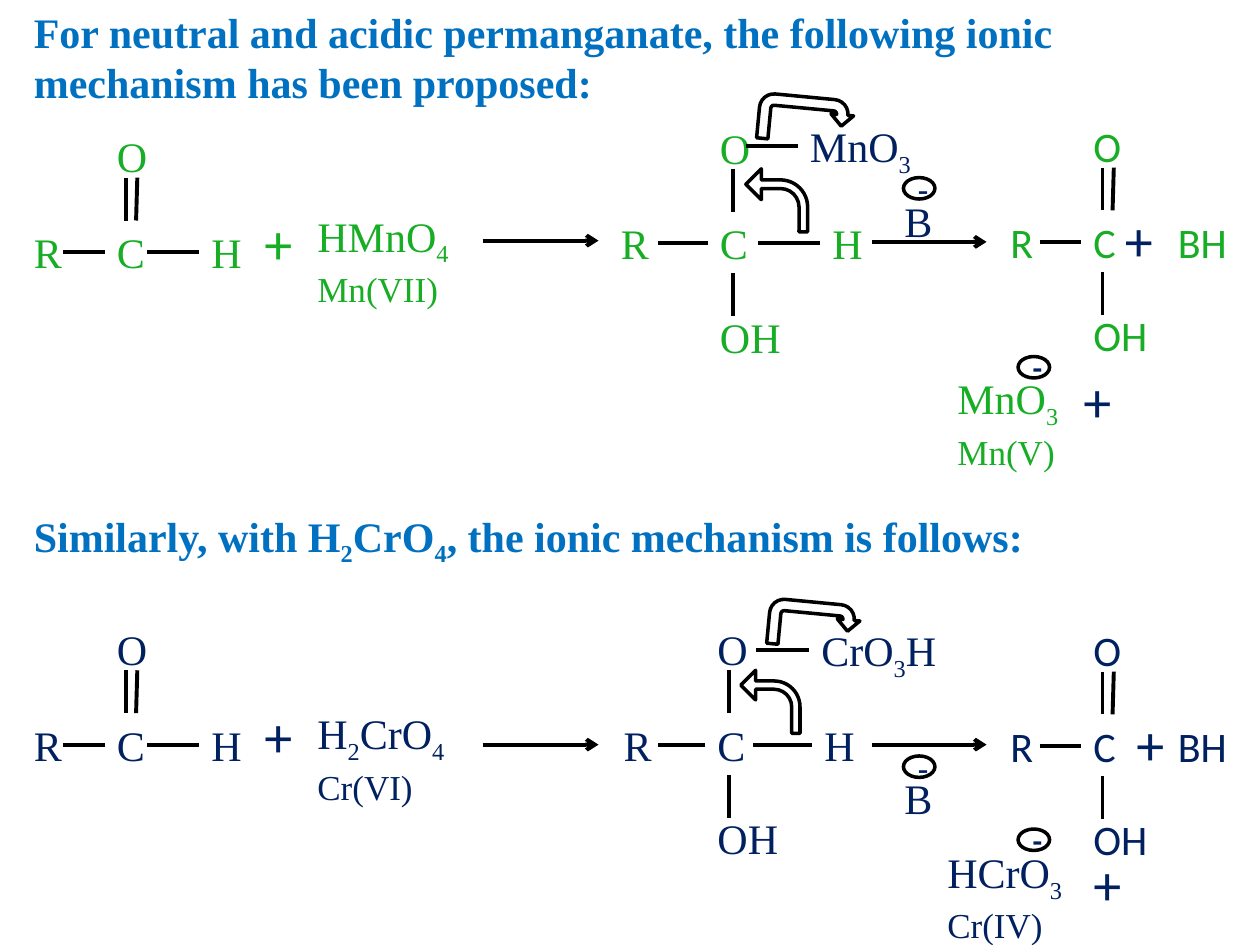
"""Build a slide of the ionic mechanisms of aldehyde oxidation."""
from lxml.etree import SubElement
from pptx import Presentation
from pptx.dml.color import RGBColor
from pptx.enum.shapes import MSO_CONNECTOR, MSO_SHAPE
from pptx.enum.text import MSO_ANCHOR, MSO_AUTO_SIZE, PP_ALIGN
from pptx.oxml.ns import qn
from pptx.util import Inches, Pt

GREEN, NAVY, BLUE, BLACK, WHITE = "17AD25", "002060", "0070C0", "000000", "FFFFFF"
SERIF, SANS = "Times New Roman", "Calibri"

# Text between bars is subscript; each paragraph lists (text, size) pieces.
HEADINGS = [
    ((0.17, 0, 9.42, 0.91), "For neutral and acidic permanganate, the following ionic mechanism has been proposed:"),
    ((0.17, 4, 9.08, 0.5), "Similarly, with H|2|CrO|4|, the ionic mechanism is follows:"),
]
LABELS = [
    ((2.42, 1.62, 1.75, 1.21), [[("HMnO|4 ", 24), ("Mn(VII)", 20)]], SERIF, GREEN),
    ((2.42, 5.57, 1.42, 0.84), [[("H|2|CrO|4 ", 24), ("Cr(VI)", 20)]], SERIF, NAVY),
    ((6.33, 0.91, 2.25, 0.5), [[("MnO|3", 24)]], SERIF, NAVY),
    ((6.42, 4.91, 1.92, 0.5), [[("CrO|3|H", 24)]], SERIF, NAVY),
    ((7.08, 1.5, 0.83, 0.5), [[("B", 24)]], SERIF, NAVY),
    ((7.08, 6.08, 0.83, 0.5), [[("B", 24)]], SERIF, NAVY),
    ((7.5, 2.91, 1.08, 0.84), [[("MnO|3", 24)], [("Mn(V)", 20)]], SERIF, GREEN),
    ((7.42, 6.67, 1.33, 1.25), [[("HCrO|3", 24)], [("Cr(IV)", 20)]], SERIF, NAVY),
    ((9.25, 1.67, 0.83, 0.5), [[("BH", 24)]], SANS, GREEN),
    ((9.25, 5.67, 0.83, 0.5), [[("BH", 24)]], SANS, NAVY),
]
PLUSES = [(2, 1.61, GREEN), (2, 5.52, NAVY), (8.83, 1.58, NAVY),
          (8.5, 2.86, NAVY), (8.92, 5.58, NAVY), (8.58, 6.69, NAVY)]
CHARGES = [(7.17, 1.41, SERIF), (7.17, 6, SERIF), (8.08, 2.83, SANS), (8.08, 6.58, SANS)]
REACTION_ARROWS = [(3.83, 4.75, 1.91), (6.92, 7.83, 1.92), (3.83, 4.75, 5.91), (6.92, 7.83, 5.91)]
METAL_BONDS = [(5.92, 6.33, 1.16), (6, 6.42, 5.16)]

ALDEHYDE = {"hydrogen": True, "double": True, "hydroxyl": False}
ESTER = {"hydrogen": True, "double": False, "hydroxyl": True}
ACID = {"hydrogen": False, "double": True, "hydroxyl": True}
MOLECULES = [
    (0.17, 1.75, 1, SERIF, GREEN, ALDEHYDE),
    (4.83, 1.68, 1.19, SERIF, GREEN, ESTER),
    (7.92, 1.67, 1, SANS, GREEN, ACID),
    (0.17, 5.66, 1, SERIF, NAVY, ALDEHYDE),
    (4.85, 5.66, 1.13, SERIF, NAVY, ESTER),
    (7.92, 5.67, 1, SANS, NAVY, ACID),
]
# Curved electron arrows: box of the U-turn, box of the bent arrow.
ELECTRON_ARROWS = [
    ((6.02, 0.77, 0.75, 0.36), (5.92, 1.34, 0.49, 0.5)),
    ((6.1, 4.78, 0.72, 0.36), (5.88, 5.32, 0.47, 0.5)),
]


def color(value):
    return RGBColor.from_string(value)


def set_values(target, values):
    for name, value in values.items():
        setattr(target, name, value)


def add_runs(paragraph, text, size, font, fill, bold=False):
    for index, part in enumerate(text.split("|")):
        if part:
            run = paragraph.add_run()
            run.text = part
            set_values(run.font, {"size": Pt(size), "name": font, "bold": bold})
            run.font.color.rgb = color(fill)
            if index % 2:
                run.font._element.set("baseline", "-25000")


def add_text(shapes, box, paragraphs, font, fill, bold=False):
    shape = shapes.add_textbox(*map(Inches, box))
    frame = shape.text_frame
    set_values(frame, {"word_wrap": True, "auto_size": MSO_AUTO_SIZE.SHAPE_TO_FIT_TEXT})
    for index, pieces in enumerate(paragraphs):
        paragraph = frame.add_paragraph() if index else frame.paragraphs[0]
        for text, size in pieces:
            add_runs(paragraph, text, size, font, fill, bold)
    return shape


def add_line(shapes, start, end, arrow=False):
    line = shapes.add_connector(MSO_CONNECTOR.STRAIGHT, *map(Inches, start + end))
    line.line.width = Pt(2.25)
    line.line.color.rgb = color(BLACK)
    if arrow:
        SubElement(line.line._get_or_add_ln(), qn("a:tailEnd"), type="arrow")
    SubElement(line._element.spPr, qn("a:effectLst"))
    return line


def add_outline(shapes, kind, box, adjustments=()):
    shape = shapes.add_shape(kind, *map(Inches, box))
    shape.shadow.inherit = False
    shape.fill.solid()
    shape.fill.fore_color.rgb = color(WHITE)
    shape.line.color.rgb = color(BLACK)
    shape.line.width = Pt(2)
    for index, value in enumerate(adjustments):
        shape.adjustments[index] = value
    return shape


def add_charge(shapes, left, top, font):
    shape = add_outline(shapes, MSO_SHAPE.FLOWCHART_CONNECTOR, (left, top, 0.25, 0.17))
    shape.text_frame.vertical_anchor = MSO_ANCHOR.MIDDLE
    paragraph = shape.text_frame.paragraphs[0]
    paragraph.alignment = PP_ALIGN.CENTER
    add_runs(paragraph, "-", 18, font, NAVY, True)


def add_molecule(shapes, left, top, scale, font, fill, parts):
    def across(offset):
        return left + offset * scale

    def atom(text, offset, rise, width):
        box = (across(offset), top + rise, width * scale, 0.5)
        return add_text(shapes, box, [[(text, 24)]], font, fill)

    def side_bond(start, end, target):
        line = add_line(shapes, (across(start), top + 0.25), (across(end), top + 0.25))
        line.end_connect(target, 1)

    def upright_bond(x, rise):
        return add_line(shapes, (x, top + rise), (x, top + rise + 0.34))

    atom("R", 0, 0, 0.58)
    carbon = atom("C", 0.66, 0, 0.5)
    atom("O", 0.66, -0.76, 0.33)
    side_bond(0.33, 0.66, carbon)
    upright_bond(across(0.83), -0.34)
    if parts["double"]:
        upright_bond(across(0.92), -0.34).end_connect(carbon, 0)
    if parts["hydrogen"]:
        side_bond(1, 1.41, atom("H", 1.41, 0, 0.33))
    if parts["hydroxyl"]:
        upright_bond(across(0.83), 0.49)
        atom("OH", 0.66, 0.74, 0.67)


def add_electron_arrows(shapes, turn_box, bent_box):
    turn = add_outline(shapes, MSO_SHAPE.U_TURN_ARROW, turn_box, (0.25, 0.25, 0.25, 0.44, 0.57))
    turn.rotation = 5.4
    bent = add_outline(shapes, MSO_SHAPE.BENT_ARROW, bent_box, (0.14, 0.25, 0.25, 0.44))
    bent._element.spPr.get_or_add_xfrm().set("flipH", "1")


def main():
    presentation = Presentation()
    set_values(presentation, {"slide_width": Inches(10), "slide_height": Inches(7.5)})
    slide = presentation.slides.add_slide(presentation.slide_layouts[6])
    shapes = slide.shapes
    for molecule in MOLECULES:
        add_molecule(shapes.add_group_shape().shapes, *molecule)
    for boxes in ELECTRON_ARROWS:
        add_electron_arrows(shapes, *boxes)
    for start, end, y in REACTION_ARROWS:
        add_line(shapes, (start, y), (end, y), arrow=True)
    for start, end, y in METAL_BONDS:
        add_line(shapes, (start, y), (end, y))
    for charge in CHARGES:
        add_charge(shapes, *charge)
    for label in LABELS:
        add_text(shapes, *label)
    for left, top, fill in PLUSES:
        add_text(shapes, (left, top, 0.42, 0.64), [[("+", 32)]], SANS, fill)
    for box, text in HEADINGS:
        add_text(shapes, box, [[(text, 24)]], SERIF, BLUE, True)
    presentation.save("out.pptx")


if __name__ == "__main__":
    main()
